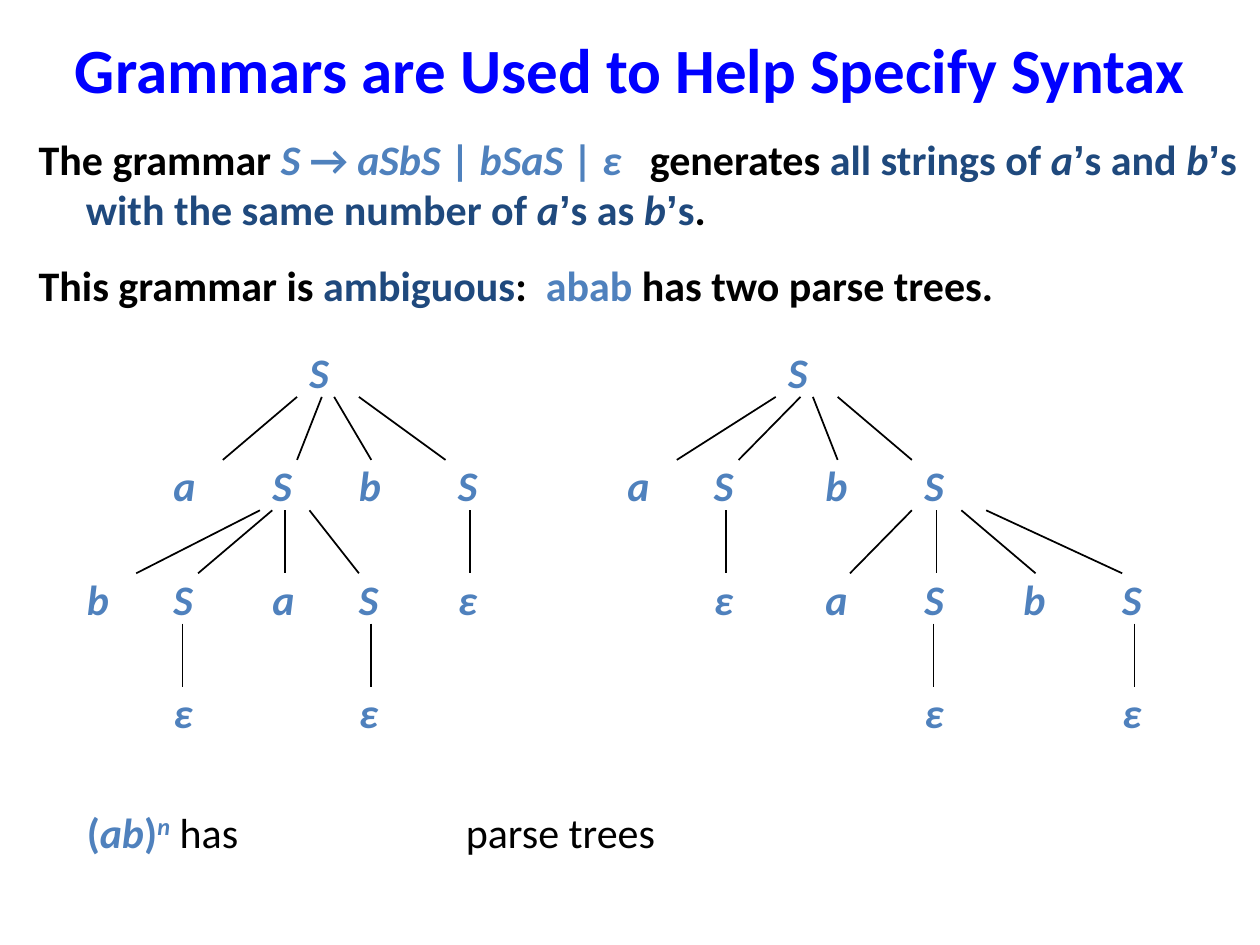
from lxml import etree
from pptx import Presentation
from pptx.dml.color import RGBColor
from pptx.enum.shapes import MSO_CONNECTOR
from pptx.enum.text import MSO_ANCHOR, PP_ALIGN
from pptx.oxml.ns import qn
from pptx.util import Pt

LINE = MSO_CONNECTOR.STRAIGHT
MID = MSO_ANCHOR.MIDDLE
CENTER = PP_ALIGN.CENTER

COLORS = {"title": "0000FF", "ink": "000000", "blue": "4F81BD", "navy": "1F497D"}
UNIT = 7.07
ROW = 64.8
TALL = 28.8

APOS = ("’", "navy", {"face": "Arial"})
VAR_A = ("a", "navy", {"ital": True})
VAR_B = ("b", "navy", {"ital": True})
RULE = [
    ("The grammar ", "ink", {}),
    ("S ", "blue", {"ital": True}),
    ("→ ", "blue", {}),
    ("aSbS", "blue", {"ital": True}),
    (" | ", "blue", {}),
    ("bSaS", "blue", {"ital": True}),
    (" | ", "blue", {}),
    ("ε", "blue", {"ital": True}),
    (" ", "blue", {"gap": 10.9}),
    ("generates ", "ink", {}),
    ("all strings of ", "navy", {}),
    VAR_A, APOS, ("s and ", "navy", {}),
    VAR_B, APOS, ("s with the same number of ", "navy", {}),
    VAR_A, APOS, ("s as ", "navy", {}),
    VAR_B, APOS, ("s", "navy", {}),
    (".", "ink", {}),
]
CLAIM = [
    ("This grammar is ", "ink", {}),
    ("ambiguous", "navy", {}),
    (":", "ink", {}),
    (" ", "ink", {"gap": 5.4}),
    ("abab", "blue", {}),
    (" has two parse trees.", "ink", {}),
]
COUNT = [
    ("(", "blue", {}),
    ("ab", "blue", {"ital": True}),
    (")", "blue", {}),
    ("n", "blue", {"ital": True, "sup": True}),
    (" has\tparse trees", "ink", {"bold": False}),
]

LEFT_TREE = (
    [
        [("S", 18)],
        [("a", 7), ("S", 15), ("b", 22), ("S", 30)],
        [("b", 0), ("S", 7), ("a", 15), ("S", 22), ("ε", 30)],
        [("ε", 7), ("ε", 22)],
    ],
    [
        [(18, 12), (20, 18), (21, 24), (23, 30)],
        [(15, 5), (16, 10), (17, 17), (19, 23), (32, 32)],
        [(8.75, 8.75), (24, 24)],
    ],
)
RIGHT_TREE = (
    [
        [("S", 13)],
        [("a", 0), ("S", 7), ("b", 16), ("S", 24)],
        [("ε", 7), ("a", 16), ("S", 24), ("b", 32), ("S", 40)],
        [("ε", 24), ("ε", 40)],
    ],
    [
        [(13, 5), (15, 10), (16, 18), (18, 24)],
        [(9, 9), (24, 19), (26, 26), (28, 34), (30, 41)],
        [(25.75, 25.75), (42, 42)],
    ],
)


def add_run(para, text, color, size=24, face="Calibri", bold=True, ital=False,
            sup=False, gap=0):
    run = para.add_run()
    run.text = text
    font = run.font
    font.name, font.size = face, Pt(size)
    font.bold, font.italic = bold, ital
    font.color.rgb = RGBColor.from_string(COLORS[color])
    props = run._r.get_or_add_rPr()
    if sup:
        props.set("baseline", "30000")
    if gap:
        props.set("spc", str(round(gap * 100)))


def add_runs(para, runs):
    for text, color, style in runs:
        add_run(para, text, color, **style)


def add_box(slide, left, top, width, height, wrap=True):
    shape = slide.shapes.add_textbox(Pt(left), Pt(top), Pt(width), Pt(height))
    shape.text_frame.word_wrap = wrap
    return shape.text_frame


def add_line(slide, *ends):
    line = slide.shapes.add_connector(LINE, *[Pt(end) for end in ends])
    line.line.width = Pt(1)
    line.line.color.rgb = RGBColor.from_string(COLORS["ink"])
    etree.SubElement(line._element.spPr, qn("a:effectLst"))


def put_title(slide, left, top, width, height):
    title = slide.shapes.title
    title.left, title.top = Pt(left), Pt(top)
    title.width, title.height = Pt(width), Pt(height)
    frame = title.text_frame
    frame.vertical_anchor = MID
    para = frame.paragraphs[0]
    para.alignment = CENTER
    add_run(para, "Grammars are Used to Help Specify Syntax", "title", 36)


def put_body(slide, left, top, width, height):
    frame = add_box(slide, left, top, width, height)
    first, last = frame.paragraphs[0], frame.add_paragraph()
    last.space_before = Pt(14.4)
    for para, runs in ((first, RULE), (last, CLAIM)):
        props = para._p.get_or_add_pPr()
        props.set("marL", str(Pt(27)))
        props.set("indent", str(-Pt(27)))
        add_runs(para, runs)


def put_tree(slide, left, top, tree):
    nodes, edges = tree
    for level, row in enumerate(nodes):
        for text, col in row:
            frame = add_box(slide, left + col * UNIT, top + level * ROW,
                            5 * UNIT, TALL, False)
            frame.vertical_anchor = MID
            add_run(frame.paragraphs[0], text, "blue", ital=True)
    for level, row in enumerate(edges):
        start = top + level * ROW + TALL
        for head, tail in row:
            add_line(slide, left + head * UNIT, start,
                     left + tail * UNIT, top + (level + 1) * ROW)


def put_count(slide, left, top, width, height):
    para = add_box(slide, left, top, width, height).paragraphs[0]
    tabs = etree.SubElement(para._p.get_or_add_pPr(), qn("a:tabLst"))
    etree.SubElement(tabs, qn("a:tab"), pos=str(Pt(216.6)), algn="l")
    add_runs(para, COUNT)


def main():
    deck = Presentation()
    deck.slide_width, deck.slide_height = Pt(720), Pt(540)
    slide = deck.slides.add_slide(deck.slide_layouts[5])
    put_title(slide, 0, 6, 720, 66)
    put_body(slide, 15, 72.7, 705, 435.6)
    put_tree(slide, 42.5, 198, LEFT_TREE)
    put_tree(slide, 351.4, 198, RIGHT_TREE)
    put_count(slide, 42.5, 457.2, 430.6, 36)
    deck.save("out.pptx")


if __name__ == "__main__":
    main()
